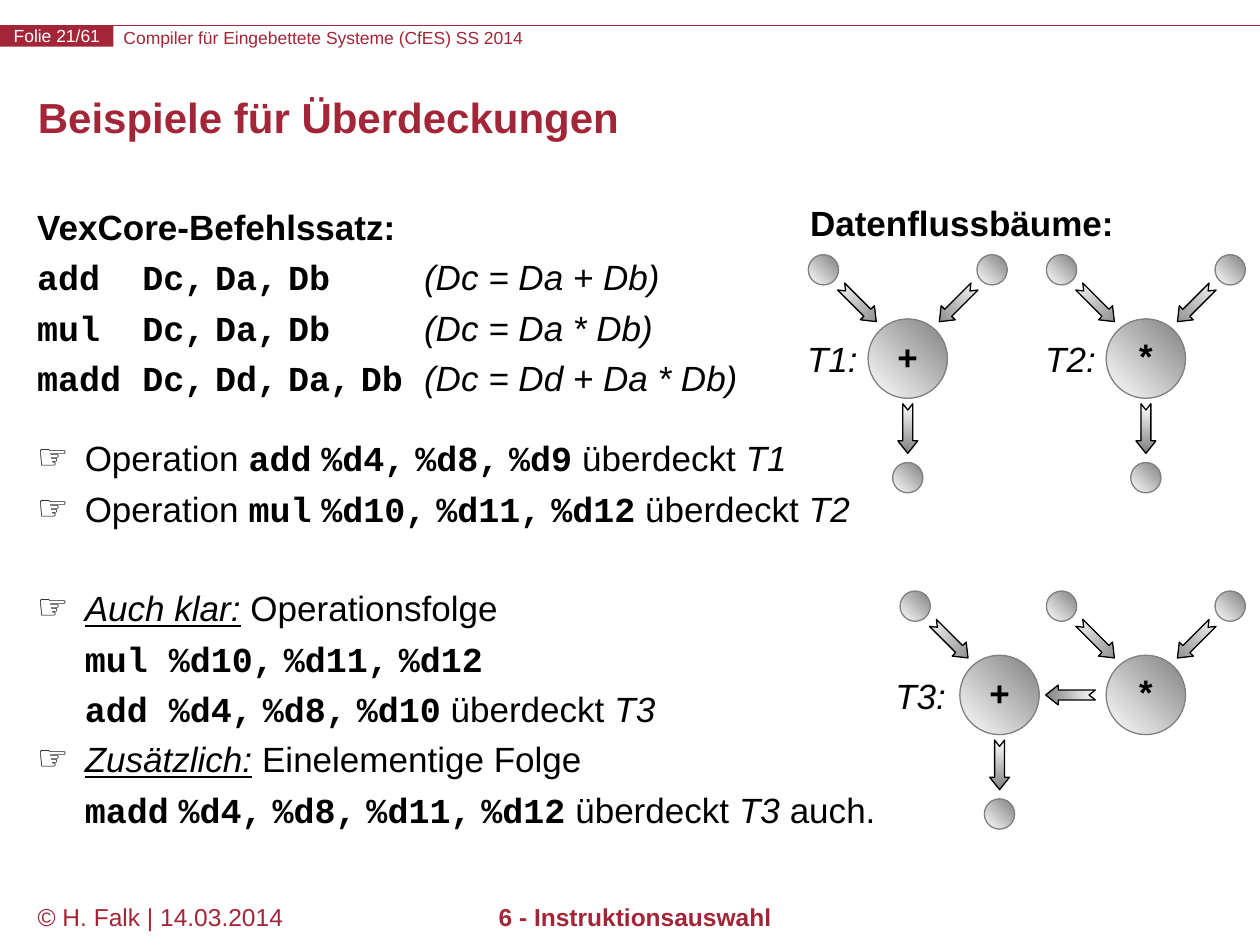
from lxml.etree import SubElement
from pptx import Presentation
from pptx.dml.color import RGBColor
from pptx.enum.shapes import MSO_CONNECTOR, MSO_SHAPE
from pptx.enum.text import MSO_ANCHOR, PP_ALIGN
from pptx.oxml.ns import qn
from pptx.util import Cm, Pt

RED = RGBColor(0xA3, 0x26, 0x38)
GRAY = RGBColor(0x80, 0x80, 0x80)
BLACK = RGBColor(0, 0, 0)
WHITE = RGBColor(255, 255, 255)

PLAIN = {"size": Pt(20), "name": "Arial", "bold": False}
BOLD = {**PLAIN, "bold": True}
ITALIC = {**PLAIN, "italic": True}
UNDERLINED = {**ITALIC, "underline": True}
CODE = {**BOLD, "name": "Courier New"}
WIDE_CODE = {**CODE}


def add_run(p, text, fmt, color=BLACK):
    r = p.add_run()
    r.text = text
    for key, value in fmt.items():
        setattr(r.font, key, value)
    r.font.color.rgb = color


def add_node(kind, x, y, w, h, line, angle):
    sp = s.shapes.add_shape(kind, Cm(x - w / 2), Cm(y - h / 2), Cm(w), Cm(h))
    sp.shadow.inherit = False
    sp.fill.gradient()
    sp.fill.gradient_angle = angle
    for stop, color in zip(sp.fill.gradient_stops, (WHITE, GRAY)):
        stop.color.rgb = color
    sp.line.color.rgb = line
    sp.line.width = Pt(0.75)
    return sp


prs = Presentation()
prs.slide_width, prs.slide_height = Cm(25.4), Cm(19.05)
s = prs.slides.add_slide(prs.slide_layouts[5])

rule = s.shapes.add_connector(MSO_CONNECTOR.STRAIGHT, Cm(0), Cm(0.51), Cm(25.4), Cm(0.51))
rule.line.color.rgb = RED
rule.line.width = Pt(0.75)
SubElement(rule._element.spPr, qn("a:effectLst"))

tag = s.shapes.add_shape(MSO_SHAPE.RECTANGLE, Cm(0), Cm(0.51), Cm(2.29), Cm(0.43))
tag.shadow.inherit = False
tag.fill.solid()
tag.fill.fore_color.rgb = RED
tag.line.fill.background()
tf = tag.text_frame
tf.margin_left = tf.margin_right = tf.margin_top = tf.margin_bottom = 0
tf.paragraphs[0].alignment = PP_ALIGN.CENTER
add_run(tf.paragraphs[0], "Folie 21/61", {**PLAIN, "size": Pt(10)}, WHITE)

title = s.shapes.title
title.left, title.top, title.width, title.height = Cm(0.51), Cm(1.52), Cm(24.41), Cm(1.83)
title.text_frame.vertical_anchor = MSO_ANCHOR.MIDDLE
p = title.text_frame.paragraphs[0]
p.alignment = PP_ALIGN.LEFT
p.line_spacing = Pt(24)
add_run(p, "Beispiele für Überdeckungen", {**BOLD, "size": Pt(24)}, RED)

SMALL = {**PLAIN, "size": Pt(10)}
FOOT = {**PLAIN, "size": Pt(14)}
labels = [
    ("Compiler für Eingebettete Systeme (CfES) SS 2014", 2.49, 0.54, 16.76, 0.43, SMALL, RED, PP_ALIGN.LEFT),
    ("© H. Falk | 14.03.2014", 0.76, 18.19, 5.08, 0.6, FOOT, RED, PP_ALIGN.LEFT),
    ("6 - Instruktionsauswahl", 5.11, 18.19, 15.39, 0.6, {**FOOT, "bold": True}, RED, PP_ALIGN.CENTER),
    ("Datenflussbäume:", 16.33, 4.07, 6.17, 0.86, BOLD, BLACK, PP_ALIGN.LEFT),
    ("T1:", 16.27, 6.81, 1.1, 0.86, ITALIC, BLACK, PP_ALIGN.LEFT),
    ("T2:", 21.07, 6.81, 1.1, 0.86, ITALIC, BLACK, PP_ALIGN.LEFT),
    ("T3:", 18.05, 13.6, 1.1, 0.86, ITALIC, BLACK, PP_ALIGN.LEFT),
]
for text, x, y, w, h, fmt, color, align in labels:
    tf = s.shapes.add_textbox(Cm(x), Cm(y), Cm(w), Cm(h)).text_frame
    tf.word_wrap = True
    tf.margin_left = tf.margin_right = tf.margin_top = tf.margin_bottom = 0
    tf.paragraphs[0].alignment = align
    add_run(tf.paragraphs[0], text, fmt, color)

COVERS = (" überdeckt ", PLAIN)
BREAK = ("\n", PLAIN)
body = [
    (0, False, [("VexCore-Befehlssatz:", BOLD)]),
    (0, False, [("add\tDc, Da, Db\t", CODE), ("(Dc = Da + Db)", ITALIC)]),
    (0, False, [("mul\tDc, Da, Db\t", CODE), ("(Dc = Da * Db)", ITALIC)]),
    (0, False, [("madd\tDc, Dd, Da, Db\t", CODE), ("(Dc = Dd + Da * Db)", ITALIC)]),
    (17, True, [("Operation ", PLAIN), ("add %d4, %d8, %d9", CODE), COVERS, ("T1", ITALIC)]),
    (0, True, [("Operation ", PLAIN), ("mul %d10, %d11, %d12", CODE), COVERS, ("T2", ITALIC)]),
    (28, True, [("Auch klar:", UNDERLINED), (" Operationsfolge", PLAIN), BREAK,
                ("mul ", WIDE_CODE), ("%d10, %d11, %d12", CODE), BREAK,
                ("add ", WIDE_CODE), ("%d4, %d8, %d10", CODE), COVERS, ("T3", ITALIC)]),
    (0, True, [("Zusätzlich:", UNDERLINED), (" Einelementige Folge", PLAIN), BREAK,
               ("madd %d4, %d8, %d11, %d12", CODE), COVERS, ("T3", ITALIC), (" auch.", PLAIN)]),
]
tf = s.shapes.add_textbox(Cm(0.5), Cm(3.85), Cm(24.41), Cm(13.87)).text_frame
tf.word_wrap = True
for i, (gap, bullet, runs) in enumerate(body):
    p = tf.add_paragraph() if i else tf.paragraphs[0]
    p.line_spacing = 1.2
    p.space_before = Pt(gap)
    pPr = p._p.get_or_add_pPr()
    if bullet:
        pPr.set("marL", str(Cm(0.96)))
        pPr.set("indent", str(-Cm(0.96)))
        SubElement(pPr, qn("a:buFont"), typeface="Arial")
        SubElement(pPr, qn("a:buChar"), char="☞")
    else:
        tabs = SubElement(pPr, qn("a:tabLst"))
        for pos in (2.12, 7.8):
            SubElement(tabs, qn("a:tab"), pos=str(Cm(pos)), algn="l")
    for text, fmt in runs:
        if text == "\n":
            p.add_line_break()
        elif fmt is CODE:
            for j, word in enumerate(text.split(" ")):
                if j:
                    add_run(p, " ", BOLD)
                add_run(p, word, CODE)
        else:
            add_run(p, text, fmt)

LEFT_IN, RIGHT_IN, OUT = (-1.7, -1.79), (1.7, -1.79), (0, 2.4)
arrows = {LEFT_IN: (-0.99, -1.1, 45), RIGHT_IN: (0.99, -1.1, 135), OUT: (0, 1.41, 90)}
operators = [
    ("+", 18.3, 7.23, (LEFT_IN, RIGHT_IN, OUT)),
    ("*", 23.1, 7.23, (LEFT_IN, RIGHT_IN, OUT)),
    ("+", 20.15, 14.01, (LEFT_IN, OUT)),
    ("*", 23.1, 14.01, (LEFT_IN, RIGHT_IN)),
]
edges = [(21.58, 14.01, 180)]
for symbol, x, y, leaves in operators:
    sp = add_node(MSO_SHAPE.OVAL, x, y, 1.6, 1.6, GRAY, 45)
    tf = sp.text_frame
    tf.margin_left = tf.margin_right = tf.margin_top = 0
    tf.margin_bottom = Cm(0.1)
    tf.paragraphs[0].alignment = PP_ALIGN.CENTER
    add_run(tf.paragraphs[0], symbol, CODE)
    for leaf in leaves:
        add_node(MSO_SHAPE.OVAL, x + leaf[0], y + leaf[1], 0.61, 0.61, GRAY, 45)
        dx, dy, turn = arrows[leaf]
        edges.append((x + dx, y + dy, turn))

for x, y, turn in edges:
    sp = add_node(MSO_SHAPE.NOTCHED_RIGHT_ARROW, x, y, 1, 0.4, BLACK, 0)
    sp.adjustments[0], sp.adjustments[1] = 0.5, 0.63
    sp.rotation = turn

prs.save("out.pptx")
